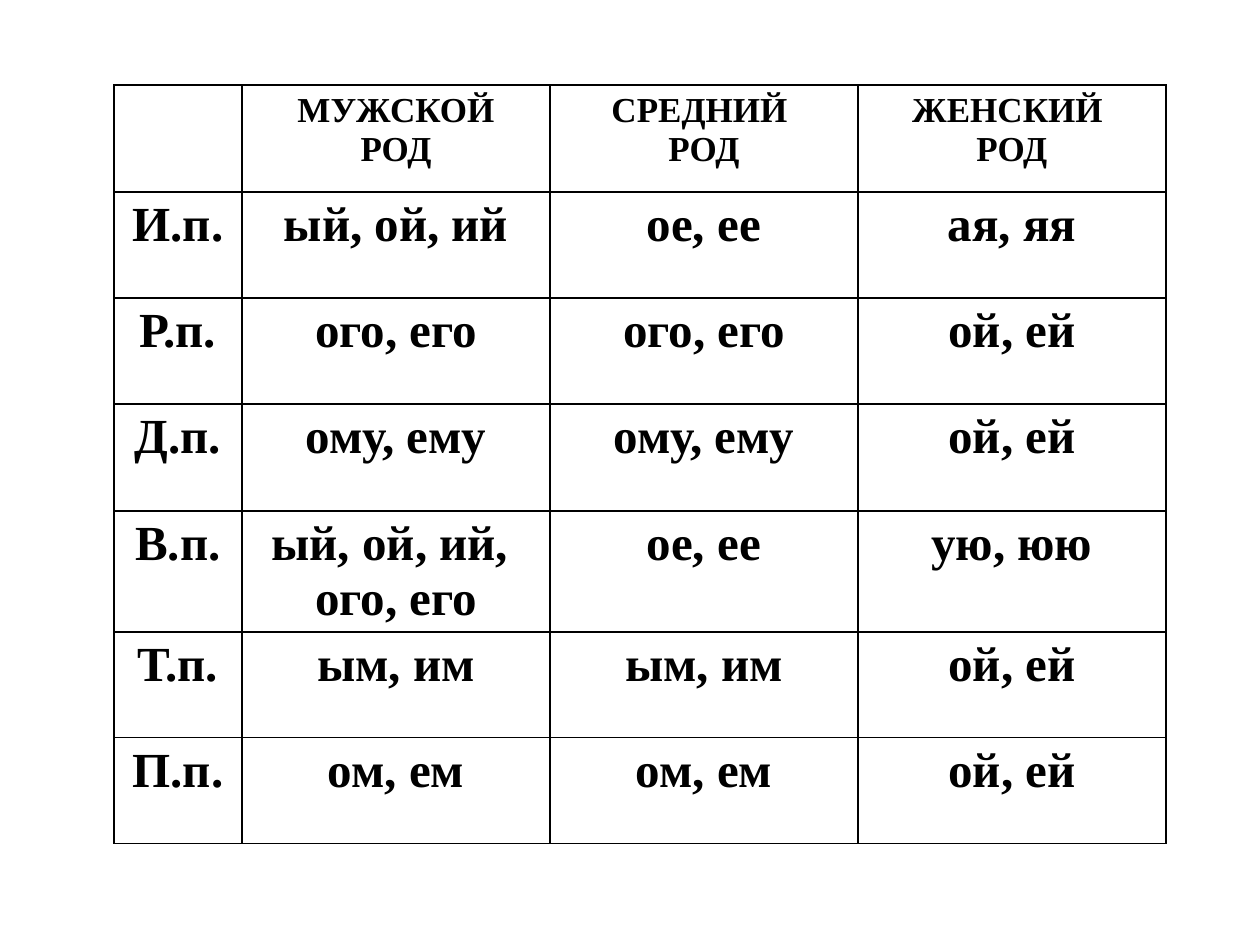
"""Build a slide with a table of Russian adjective endings by case and gender."""
from itertools import pairwise

from lxml.etree import SubElement
from pptx import Presentation
from pptx.dml.color import RGBColor
from pptx.enum.text import PP_ALIGN as Align
from pptx.oxml.ns import qn
from pptx.util import Pt

PX = 914400 / 126
BLACK = "000000"
COLUMN_EDGES = [114, 242, 550, 858, 1166]
ROW_EDGES = [85, 192, 298, 404, 511, 632, 738, 844]
ENDINGS = [
    ["", "МУЖСКОЙ\nРОД", "СРЕДНИЙ \nРОД", "ЖЕНСКИЙ \nРОД"],
    ["И.п.", "ый, ой, ий", "ое, ее", "ая, яя"],
    ["Р.п.", "ого, его", "ого, его", "ой, ей"],
    ["Д.п.", "ому, ему", "ому, ему", "ой, ей"],
    ["В.п.", "ый, ой, ий, \nого, его", "ое, ее", "ую, юю"],
    ["Т.п.", "ым, им", "ым, им", "ой, ей"],
    ["П.п.", "ом, ем", "ом, ем", "ой, ей"],
]


def px(length):
    return round(length * PX)


def color(code):
    return RGBColor.from_string(code)


deck = Presentation()
deck.slide_width, deck.slide_height = px(1260), px(945)
page = deck.slides.add_slide(deck.slide_layouts[6])

left, right = COLUMN_EDGES[0], COLUMN_EDGES[-1]
top, bottom = ROW_EDGES[0], ROW_EDGES[-1]
table = page.shapes.add_table(
    len(ENDINGS), len(ENDINGS[0]), px(left), px(top), px(right - left), px(bottom - top)
).table
table.first_row = table.horz_banding = False
for column, (start, end) in zip(table.columns, pairwise(COLUMN_EDGES)):
    column.width = px(end - start)
for row, (start, end) in zip(table.rows, pairwise(ROW_EDGES)):
    row.height = px(end - start)

for row_index, texts in enumerate(ENDINGS):
    for column_index, text in enumerate(texts):
        cell = table.cell(row_index, column_index)
        cell.margin_bottom = px(2)
        cell.text = text
        for para in cell.text_frame.paragraphs:
            para.alignment = Align.CENTER
            para.font.name = "Times New Roman"
            para.font.size = Pt(28 if row_index else 20)
            para.font.bold = True
            para.font.color.rgb = color(BLACK)
        properties = cell._tc.get_or_add_tcPr()
        for side in ("a:lnL", "a:lnR", "a:lnT", "a:lnB"):
            border = SubElement(properties, qn(side), w=str(Pt(1)))
            fill = SubElement(border, qn("a:solidFill"))
            SubElement(fill, qn("a:srgbClr"), val=BLACK)
        cell.fill.background()

deck.save("out.pptx")
